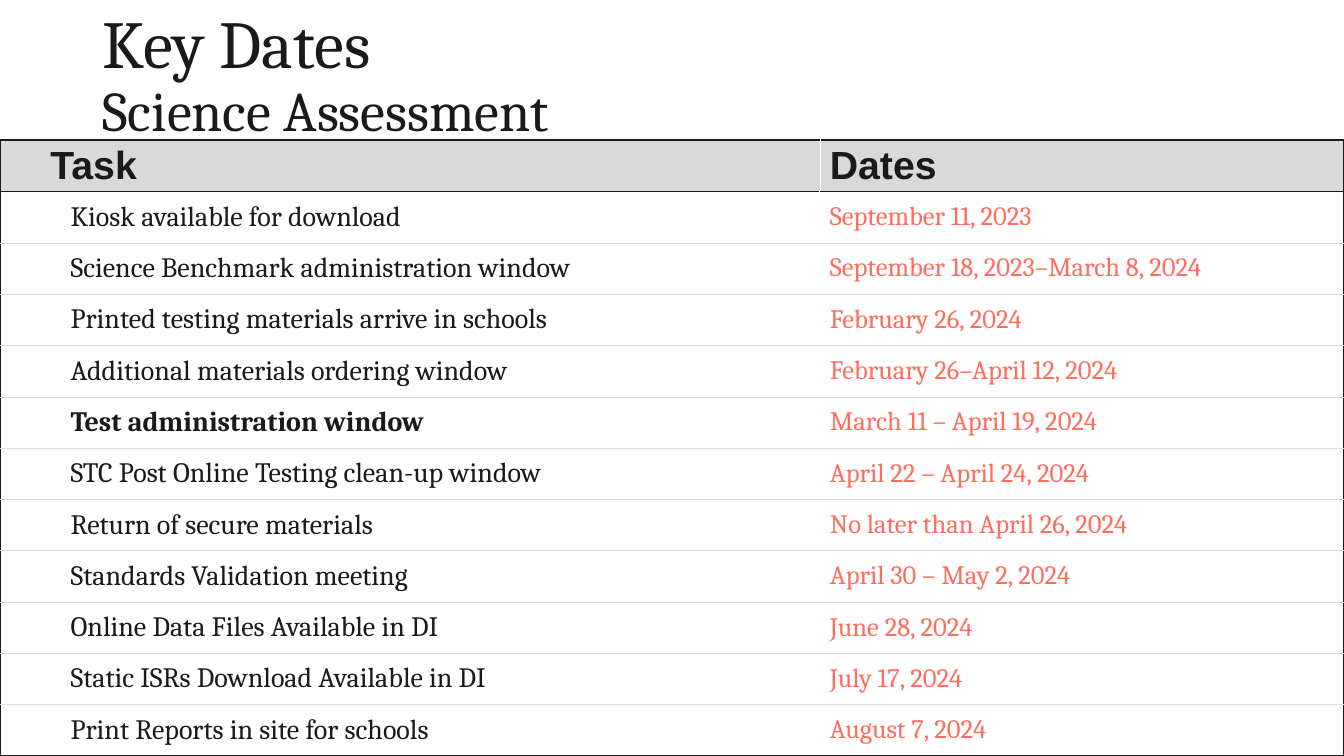
from lxml import etree
from pptx import Presentation
from pptx.dml.color import RGBColor
from pptx.enum.text import MSO_ANCHOR
from pptx.oxml.ns import qn
from pptx.util import Inches, Pt

MIDDLE = MSO_ANCHOR.MIDDLE
COLORS = {"ink": "1A1A1A", "rule": "D9D9D9", "white": "FFFFFF", "date": "FF6D5F"}

KEY_DATES = [
    ("Kiosk available for download", "September 11, 2023"),
    ("Science Benchmark administration window", "September 18, 2023–March 8, 2024"),
    ("Printed testing materials arrive in schools", "February 26, 2024"),
    ("Additional materials ordering window", "February 26–April 12, 2024"),
    ("Test administration window", "March 11 – April 19, 2024"),
    ("STC Post Online Testing clean-up window", "April 22 – April 24, 2024"),
    ("Return of secure materials", "No later than April 26, 2024"),
    ("Standards Validation meeting", "April 30 – May 2, 2024"),
    ("Online Data Files Available in DI", "June 28, 2024"),
    ("Static ISRs Download Available in DI", "July 17, 2024"),
    ("Print Reports in site for schools", "August 7, 2024"),
]
BOLD_TASK = "Test administration window"


def add_text(p, text, size, font="Cambria", color="ink", bold=False):
    r = p.add_run()
    r.text = text
    r.font.size = Pt(size)
    r.font.name = font
    r.font.bold = bold
    r.font.color.rgb = RGBColor.from_string(COLORS[color])


class DatesSlide:
    def __init__(self, prs):
        self.width, self.height = prs.slide_width, prs.slide_height
        self.s = prs.slides.add_slide(prs.slide_layouts[6])

    def area(self, x, y, w, h):
        return (round(self.width * x / 100), round(self.height * y / 100),
                round(self.width * w / 100), round(self.height * h / 100))

    def title(self, area, lines):
        tf = self.s.shapes.add_textbox(*self.area(*area)).text_frame
        tf.word_wrap = True
        tf.vertical_anchor = MIDDLE
        p = tf.paragraphs[0]
        p.line_spacing = 0.9
        for i, (text, size) in enumerate(lines):
            if i:
                p.add_line_break()
            add_text(p, text, size)

    def borders(self, cell, **sides):
        tcPr = cell._tc.get_or_add_tcPr()
        for side in "LRTB":
            color, width = sides[side]
            ln = etree.SubElement(tcPr, qn(f"a:ln{side}"), w=str(Pt(width)))
            fill = etree.SubElement(ln, qn("a:solidFill"))
            etree.SubElement(fill, qn("a:srgbClr"), val=COLORS[color])

    def cell(self, cell, text, row, col, last):
        header = row == 0
        edge, thin = ("ink", 1), ("ink", 0.25)
        rule = ("rule", 0.25)
        inner = ("white", 0.25 if header else 1)
        self.borders(
            cell,
            L=inner if col else edge,
            R=edge if col else inner,
            T=edge if header else thin if row == 1 else rule,
            B=thin if header else edge if row == last else rule,
        )
        if header:
            cell.fill.solid()
            cell.fill.fore_color.rgb = RGBColor.from_string(COLORS["rule"])
        else:
            cell.fill.background()
        cell.vertical_anchor = MIDDLE
        if header or col == 0:
            cell.margin_left = Inches(0.1 if col else 0.5)
            cell.margin_right = Inches(0.5 if col else 0)
            cell.margin_top = cell.margin_bottom = 0
        p = cell.text_frame.paragraphs[0]
        if header:
            add_text(p, text, 28, font="Arial", bold=True)
        elif col:
            add_text(p, text, 19, color="date")
        else:
            p._p.get_or_add_pPr().set("marL", str(Inches(0.2)))
            add_text(p, text, 20, bold=text == BOLD_TASK)

    def table(self, area, shares, rows):
        x, y, w, h = self.area(*area)
        table = self.s.shapes.add_table(len(rows), len(shares), x, y, w, h).table
        table.first_row = table.horz_banding = False
        for column, share in zip(table.columns, shares):
            column.width = round(w * share)
        for i, values in enumerate(rows):
            table.rows[i].height = round(h / len(rows))
            for j, text in enumerate(values):
                self.cell(table.cell(i, j), text, i, j, len(rows) - 1)


def main():
    prs = Presentation()
    prs.slide_width, prs.slide_height = Inches(13.33), Inches(7.5)
    slide = DatesSlide(prs)
    slide.title((6.9, 0, 86.25, 20.4), [("Key Dates", 48), ("Science Assessment", 40)])
    slide.table((0, 18.53, 100, 81.47), (0.61, 0.39), [("Task", "Dates"), *KEY_DATES])
    prs.save("out.pptx")


if __name__ == "__main__":
    main()
